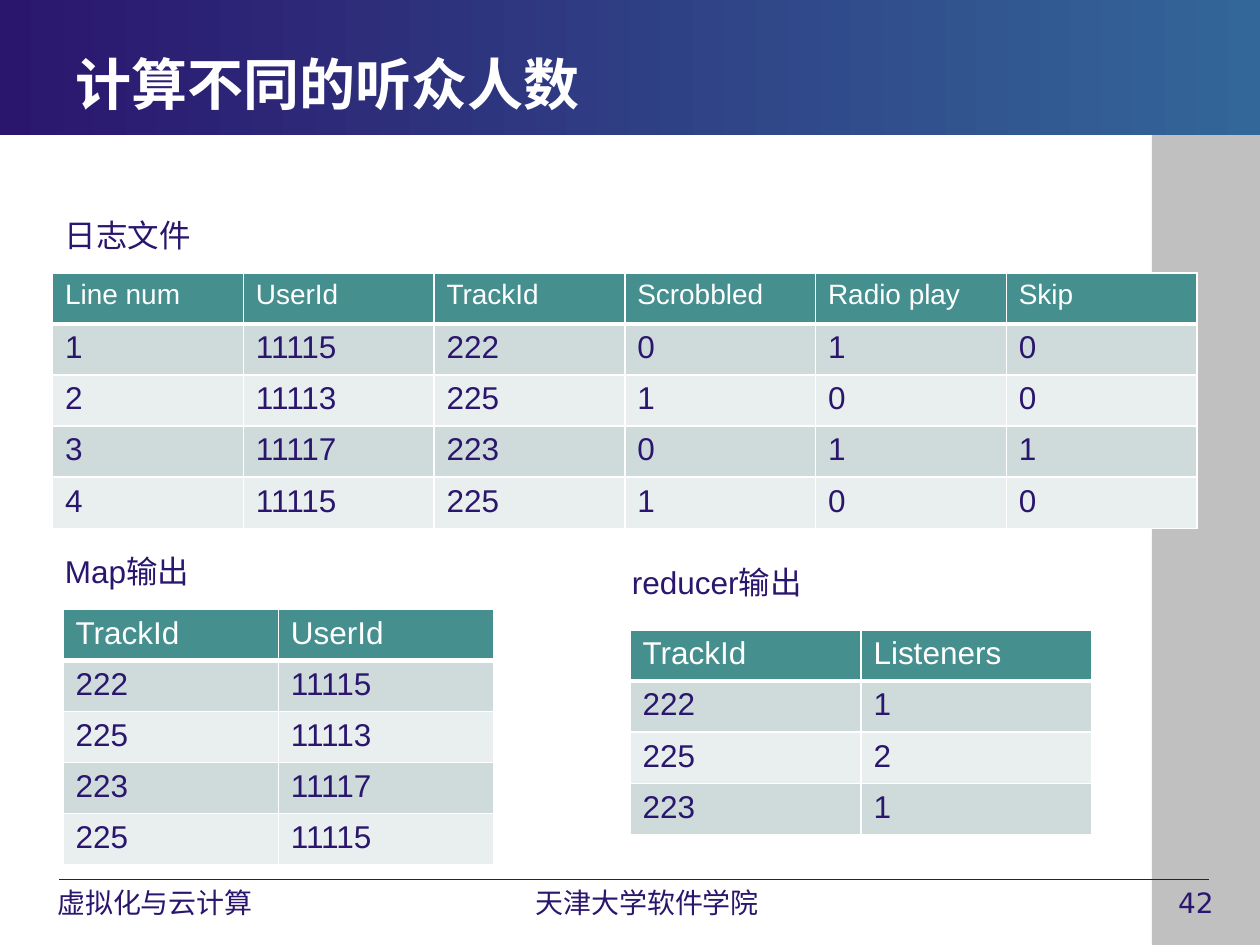
from lxml import etree
from pptx import Presentation
from pptx.dml.color import RGBColor
from pptx.enum.shapes import MSO_CONNECTOR, MSO_SHAPE
from pptx.enum.text import MSO_ANCHOR, MSO_AUTO_SIZE, PP_ALIGN
from pptx.oxml.ns import qn
from pptx.util import Cm, Pt

RECTANGLE = MSO_SHAPE.RECTANGLE
STRAIGHT = MSO_CONNECTOR.STRAIGHT
LEFT, CENTER = PP_ALIGN.LEFT, PP_ALIGN.CENTER
TOP, MIDDLE = MSO_ANCHOR.TOP, MSO_ANCHOR.MIDDLE
FIT_SHAPE = MSO_AUTO_SIZE.SHAPE_TO_FIT_TEXT

COLORS = {
    "ink": "2B166E",
    "blue": "336699",
    "gray": "C0C0C0",
    "white": "FFFFFF",
    "head": "458F8F",
    "odd": "CFDBDB",
    "even": "E9EEEE",
}
BODY_FONT, TITLE_FONT = "Arial", "DejaVu Sans"
SLIDE_W, SLIDE_H = 25.4, 19.05
BANNER_H = 2.72
ROW_H = 1.03
LABEL_H = 1.02


def rgb(name):
    return RGBColor.from_string(COLORS[name])


def add_run(paragraph, text, size, color, font, bold=False):
    run = paragraph.add_run()
    run.text = text
    run.font.size = Pt(size)
    run.font.name = font
    run.font.bold = bold
    run.font.color.rgb = rgb(color)


def add_text(slide, box, text, size, color="ink", font=BODY_FONT,
             bold=False, align=LEFT, anchor=TOP):
    frame = slide.shapes.add_textbox(*map(Cm, box)).text_frame
    frame.word_wrap = True
    frame.vertical_anchor = anchor
    paragraph = frame.paragraphs[0]
    paragraph.alignment = align
    add_run(paragraph, text, size, color, font, bold)
    return frame


def add_block(slide, box):
    block = slide.shapes.add_shape(RECTANGLE, *map(Cm, box))
    block.shadow.inherit = False
    block.line.fill.background()
    return block


def add_side_band(slide, box):
    band = add_block(slide, box)
    band.fill.solid()
    band.fill.fore_color.rgb = rgb("gray")


def add_banner(slide, box, title):
    left, top, _, _ = box
    banner = add_block(slide, box)
    banner.fill.gradient()
    banner.fill.gradient_angle = 0
    for stop, color in zip(banner.fill.gradient_stops, ("ink", "blue")):
        stop.color.rgb = rgb(color)
    add_text(slide, (left + 1.27, top + 0.89, 17.15, 1.57), title, 32,
             "white", TITLE_FONT, bold=True, anchor=MIDDLE)


def add_footer(slide, box, course, school, page):
    left, top, width, height = box
    rule = slide.shapes.add_connector(
        STRAIGHT, Cm(left + 1.19), Cm(top), Cm(left + width - 1.02), Cm(top))
    rule.line.color.rgb = rgb("ink")
    rule.line.width = Pt(0.75)
    etree.SubElement(rule._element.spPr, qn("a:effectLst"))
    for text, offset, text_w, align in (
        (page, 23.5, 1.8, LEFT),
        (course, 0.66, 4.93, CENTER),
        (school, 10.19, 5.72, CENTER),
    ):
        add_text(slide, (left + offset, top, text_w, height), text, 16,
                 font=TITLE_FONT, align=align)


def set_borders(cell, bottom):
    properties = cell._tc.get_or_add_tcPr()
    sides = (("a:lnL", 1), ("a:lnR", 1), ("a:lnT", 1), ("a:lnB", bottom))
    # Borders come before the fill in the cell properties
    for index, (tag, points) in enumerate(sides):
        border = etree.Element(qn(tag), w=str(Pt(points)))
        fill = etree.SubElement(border, qn("a:solidFill"))
        etree.SubElement(fill, qn("a:srgbClr"), val=COLORS["white"])
        properties.insert(index, border)


def add_data_table(slide, box, rows, head_size=18):
    left, top, width = box
    column_count = len(rows[0])
    table = slide.shapes.add_table(
        len(rows), column_count, Cm(left), Cm(top), Cm(width),
        Cm(ROW_H * len(rows))).table
    for column in table.columns:
        column.width = Cm(width / column_count)
    for r, values in enumerate(rows):
        table.rows[r].height = Cm(ROW_H)
        if r == 0:
            fill, color, size, bottom = "head", "white", head_size, 3
        else:
            fill = "odd" if r % 2 else "even"
            color, size, bottom = "ink", 18, 1
        for c, value in enumerate(values):
            cell = table.cell(r, c)
            cell.fill.solid()
            cell.fill.fore_color.rgb = rgb(fill)
            set_borders(cell, bottom)
            add_run(cell.text_frame.paragraphs[0], value, size, color, BODY_FONT)


def add_label(slide, box, text):
    add_text(slide, box, text, 18).auto_size = FIT_SHAPE


def main():
    prs = Presentation()
    prs.slide_width, prs.slide_height = Cm(SLIDE_W), Cm(SLIDE_H)
    slide = prs.slides.add_slide(prs.slide_layouts[6])

    # Frame of the slide
    add_side_band(slide, (23.22, BANNER_H, 2.18, SLIDE_H - BANNER_H))
    add_footer(slide, (0, 17.73, SLIDE_W, 0.89),
               "虚拟化与云计算", "天津大学软件学院", "42")
    add_banner(slide, (0, 0, SLIDE_W, BANNER_H), "计算不同的听众人数")

    # Log file
    add_label(slide, (1.06, 4.23, 3.39, LABEL_H), "日志文件")
    add_data_table(slide, (1.06, 5.5, 23.07), [
        ("Line num", "UserId", "TrackId", "Scrobbled", "Radio play", "Skip"),
        ("1", "11115", "222", "0", "1", "0"),
        ("2", "11113", "225", "1", "0", "0"),
        ("3", "11117", "223", "0", "1", "1"),
        ("4", "11115", "225", "1", "0", "0"),
    ], head_size=16)

    # Map output
    add_label(slide, (1.06, 11.01, 3.39, LABEL_H), "Map输出")
    add_data_table(slide, (1.27, 12.28, 8.68), [
        ("TrackId", "UserId"),
        ("222", "11115"),
        ("225", "11113"),
        ("223", "11117"),
        ("225", "11115"),
    ])

    # Reducer output
    add_label(slide, (12.49, 11.22, 5.08, LABEL_H), "reducer输出")
    add_data_table(slide, (12.7, 12.7, 9.31), [
        ("TrackId", "Listeners"),
        ("222", "1"),
        ("225", "2"),
        ("223", "1"),
    ])

    prs.save("out.pptx")


if __name__ == "__main__":
    main()
